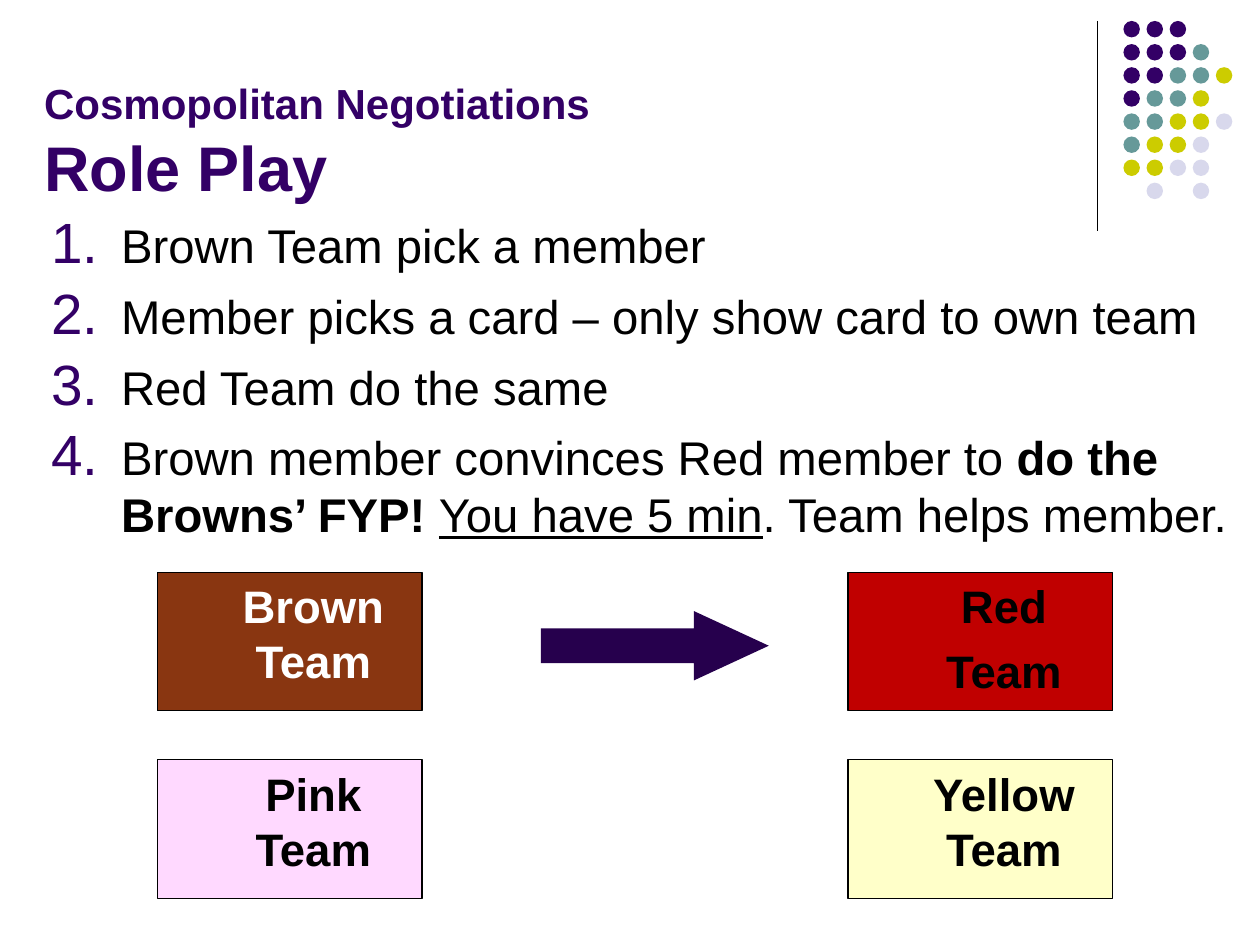
from dataclasses import dataclass

from lxml import etree
from pptx import Presentation
from pptx.dml import color
from pptx.enum import shapes, text
from pptx.oxml import ns
from pptx.util import Pt

PURPLE, BLACK, WHITE = "330066", "000000", "FFFFFF"
DOTS = ("PPP", "PPPT", "PPTTY", "PTTY", "TTYYL", "TYYL", "YYLL", " L L")
INKS = {"P": PURPLE, "T": "669999", "Y": "CCCC00", "L": "D8D8EC"}
STEP, SIZE = 13.2, 9.4
LEFT, RIGHT, UPPER, LOWER = 90, 484.6, 327, 434.2


@dataclass
class Team:
    label: str
    x: float
    y: float
    fill: str
    ink: str = BLACK


@dataclass
class Span:
    words: str
    bold: bool = False
    under: bool = False


TEAMS = (
    Team("Brown Team", LEFT, UPPER, "893611", WHITE),
    Team("Pink\vTeam", LEFT, LOWER, "FFD9FF"),
    Team("Red\nTeam", RIGHT, UPPER, "C00000"),
    Team("Yellow Team", RIGHT, LOWER, "FFFFC9"),
)
STEPS = (
    (Span("Brown Team pick a member"),),
    (Span("Member picks a card – only show card to own team"),),
    (Span("Red Team do the same"),),
    (
        Span("Brown member convinces Red member to "),
        Span("do the Browns’ FYP! ", bold=True),
        Span("You have 5 min", under=True),
        Span(". Team helps member."),
    ),
)


def rgb(code: str) -> color.RGBColor:
    return color.RGBColor.from_string(code)


def style(font, size: float, ink: str, bold: bool = False) -> None:
    font.name, font.size, font.bold = "Arial", Pt(size), bold
    font.color.rgb = rgb(ink)


def place(shape, x: float, y: float, w: float, h: float) -> None:
    shape.left, shape.top, shape.width, shape.height = Pt(x), Pt(y), Pt(w), Pt(h)


def draw(slide, kind, x: float, y: float, w: float, h: float, fill: str):
    shape = slide.shapes.add_shape(kind, Pt(x), Pt(y), Pt(w), Pt(h))
    shape.shadow.inherit = False
    shape.fill.solid()
    shape.fill.fore_color.rgb = rgb(fill)
    shape.line.fill.background()
    return shape


def indent(para, left: float, first: float = 0) -> None:
    props = para._p.get_or_add_pPr()
    props.set("marL", str(Pt(left)))
    props.set("indent", str(Pt(first)))


def number(para) -> None:
    props = para._p.get_or_add_pPr()
    tint = etree.SubElement(props, ns.qn("a:buClr"))
    etree.SubElement(tint, ns.qn("a:srgbClr"), val=PURPLE)
    etree.SubElement(props, ns.qn("a:buSzPct"), val="120000")
    etree.SubElement(props, ns.qn("a:buFont"), typeface="Arial")
    etree.SubElement(props, ns.qn("a:buAutoNum"), type="arabicPeriod")


def add_title(slide) -> None:
    title = slide.shapes.title
    place(title, 18, 18, 606, 102)
    frame = title.text_frame
    frame.text = "Cosmopolitan Negotiations\vRole Play"
    frame.auto_size = text.MSO_AUTO_SIZE.NONE
    frame.vertical_anchor = text.MSO_ANCHOR.BOTTOM
    para = frame.paragraphs[0]
    para.alignment = text.PP_ALIGN.LEFT
    for run, size in zip(para.runs, (24, 36)):
        style(run.font, size, PURPLE, True)


def add_list(slide) -> None:
    body = slide.placeholders[1]
    place(body, 18, 120, 699, 347)
    frame = body.text_frame
    frame.auto_size = text.MSO_AUTO_SIZE.NONE
    for i, spans in enumerate(STEPS):
        para = frame.add_paragraph() if i else frame.paragraphs[0]
        number(para)
        indent(para, 44, -40)
        para.space_before = Pt(8 if i else 0)
        for span in spans:
            run = para.add_run()
            run.text = span.words
            style(run.font, 27, BLACK, span.bold)
            run.font.underline = span.under


def add_team(slide, team: Team) -> None:
    box = draw(slide, shapes.MSO_SHAPE.RECTANGLE, team.x, team.y, 151.2, 79.2, team.fill)
    box.line.color.rgb = rgb(BLACK)
    box.line.width = Pt(0.75)
    frame = box.text_frame
    frame.text = team.label
    frame.word_wrap = True
    frame.vertical_anchor = text.MSO_ANCHOR.TOP
    for i, para in enumerate(frame.paragraphs):
        indent(para, 27)
        para.alignment = text.PP_ALIGN.CENTER
        para.space_before = Pt(6 if i else 0)
        for run in para.runs:
            style(run.font, 26, team.ink, True)


def add_dots(slide) -> None:
    rule = slide.shapes.add_connector(
        shapes.MSO_CONNECTOR.STRAIGHT, Pt(627), Pt(12), Pt(627), Pt(132)
    )
    rule.line.color.rgb = rgb(BLACK)
    rule.line.width = Pt(0.75)
    etree.SubElement(rule._element.spPr, ns.qn("a:effectLst"))
    for row, marks in enumerate(DOTS):
        for col, mark in enumerate(marks):
            if mark in INKS:
                x, y = 642 + col * STEP, 12 + row * STEP
                draw(slide, shapes.MSO_SHAPE.OVAL, x, y, SIZE, SIZE, INKS[mark])


def main() -> None:
    deck = Presentation()
    deck.slide_width, deck.slide_height = Pt(720), Pt(540)
    slide = deck.slides.add_slide(deck.slide_layouts[1])
    add_dots(slide)
    add_title(slide)
    add_list(slide)
    for team in TEAMS:
        add_team(slide, team)
    arrow = draw(slide, shapes.MSO_SHAPE.RIGHT_ARROW, 309, 349.2, 130.3, 39.6, "26004D")
    arrow.adjustments[0], arrow.adjustments[1] = 0.5, 1.08
    deck.save("out.pptx")


if __name__ == "__main__":
    main()
